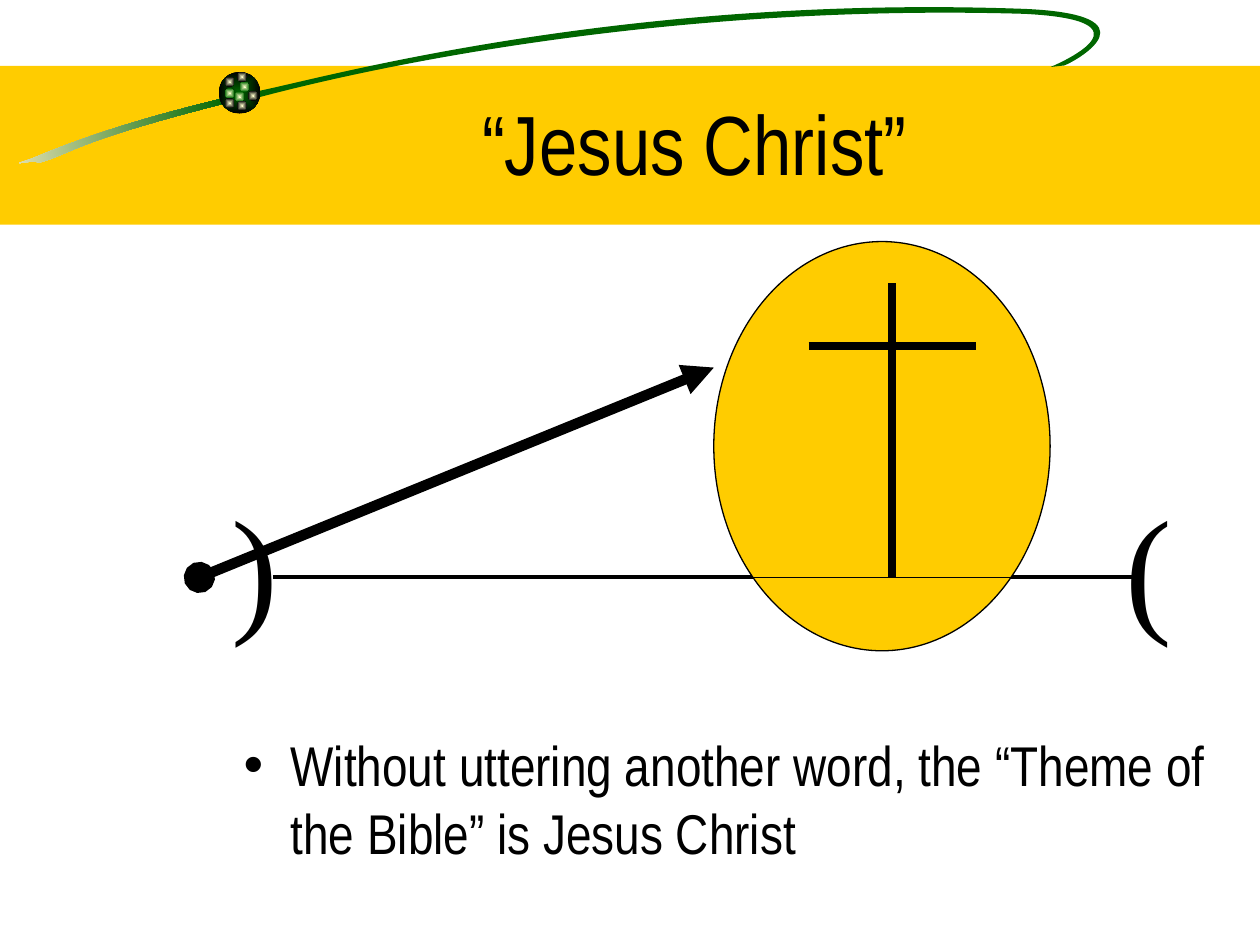
from math import cos, radians, sin

from lxml.etree import SubElement
from pptx import Presentation
from pptx.dml.color import RGBColor
from pptx.enum.shapes import MSO_CONNECTOR, MSO_SHAPE
from pptx.enum.text import MSO_ANCHOR, MSO_AUTO_SIZE, PP_ALIGN
from pptx.oxml.ns import qn
from pptx.util import Cm, Pt

COLORS = {"gold": "FFCC00", "green": "006600", "cream": "F5EBC1",
          "light": "FFFFCC", "black": "000000"}
RGB = {name: RGBColor.from_string(value) for name, value in COLORS.items()}


def paint(sp, *colors, radial=False, outline=None):
    """Fill a shape with one colour or a two-colour gradient."""
    sp.shadow.inherit = False
    if len(colors) == 1:
        sp.fill.solid()
        sp.fill.fore_color.rgb = RGB[colors[0]]
    else:
        sp.fill.gradient()
        sp.fill.gradient_angle = 0
        for stop, color, position in zip(sp.fill.gradient_stops, colors, (0, 1)):
            stop.color.rgb = RGB[color]
            stop.position = position
    if radial:
        grad = sp.element.spPr.find(qn("a:gradFill"))
        grad.remove(grad.find(qn("a:lin")))
        shade = SubElement(grad, qn("a:path"), path="shape")
        SubElement(shade, qn("a:fillToRect"), l="50000", t="50000", r="50000", b="50000")
    if outline:
        sp.line.color.rgb = RGB["black"]
        sp.line.width = Pt(outline)
    else:
        sp.line.fill.background()


def write(sp, text, **font):
    """Put one formatted paragraph into a shape and return the paragraph."""
    tf = sp.text_frame
    tf.word_wrap = True
    tf.auto_size = MSO_AUTO_SIZE.NONE
    p = tf.paragraphs[0]
    r = p.add_run()
    r.text = text
    r.font.color.rgb = RGB["black"]
    for key, value in font.items():
        setattr(r.font, key, value)
    return p


prs = Presentation()
prs.slide_width, prs.slide_height = Cm(25.4), Cm(19.05)
s = prs.slides.add_slide(prs.slide_layouts[5])
title = s.shapes.title

# Gold band
band = s.shapes.add_shape(MSO_SHAPE.RECTANGLE, 0, Cm(1.33), prs.slide_width, Cm(3.2))
paint(band, "gold")

# Swoosh: colours, box, then slide points of each move, curve or line
TILT = 8.5
SWOOSHES = [
    (("cream", "green"), (-0.08, 2.31, 4.67, 0.76), [
        (4.52, 1.98),
        (2.31, 2.51, 1.24, 2.95, 0.64, 3.2),
        (0.03, 3.4, 0.66, 3.2, 0.79, 3.28),
        (1.45, 3.1, 1.45, 2.87, 4.55, 2.08)]),
    (("green",), (5.11, -0.38, 18.19, 2.77), [
        (5.13, 1.85),
        (6.25, 1.65, 12.34, -0.13, 20.68, 0.18),
        (23.29, 0.3, 21.77, 1.19, 21.46, 1.32),
        (21.18, 1.35),
        (21.44, 1.24, 23.29, 0.41, 20.65, 0.28),
        (13.92, 0.08, 8.13, 1.19, 5.23, 1.96)]),
]
turn_cos, turn_sin = cos(radians(TILT)), sin(radians(TILT))
for colors, (left, top, width, height), pieces in SWOOSHES:
    builder = s.shapes.build_freeform(Cm(left), Cm(top))
    builder.add_line_segments([(Cm(left + width), Cm(top + height))])
    sp = builder.convert_to_shape()
    outline = next(sp.element.iter(qn("a:path")))
    for child in list(outline):
        outline.remove(child)
    for i, piece in enumerate(pieces):
        tag = "a:moveTo" if i == 0 else "a:lnTo" if len(piece) == 2 else "a:cubicBezTo"
        segment = SubElement(outline, qn(tag))
        for x, y in zip(piece[::2], piece[1::2]):
            dx, dy = x - left - width / 2, y - top - height / 2
            local_x = dx * turn_cos - dy * turn_sin + width / 2
            local_y = dx * turn_sin + dy * turn_cos + height / 2
            SubElement(segment, qn("a:pt"), x=str(Cm(local_x)), y=str(Cm(local_y)))
    SubElement(outline, qn("a:close"))
    sp.rotation = 360 - TILT
    paint(sp, *colors)

# Ball with glowing dots
BALL = [
    (4.41, 1.45, 0.84, "green", "black"),
    (4.83, 1.65, 0.2, "light", "green"),
    (4.53, 1.55, 0.2, "light", "black"),
    (4.53, 1.78, 0.2, "light", "green"),
    (4.73, 1.85, 0.2, "light", "green"),
    (5.0, 1.83, 0.2, "light", "black"),
    (4.78, 2.03, 0.2, "light", "black"),
    (4.53, 1.98, 0.2, "light", "black"),
    (4.78, 1.45, 0.2, "light", "black"),
]
for x, y, size, inner, outer in BALL:
    dot = s.shapes.add_shape(MSO_SHAPE.OVAL, Cm(x), Cm(y), Cm(size), Cm(size))
    paint(dot, inner, outer, radial=True)

# Title, brought in front of the band
title.element.getparent().append(title.element)
box = {"left": Cm(3.2), "top": Cm(1.27), "width": Cm(21.6), "height": Cm(3.18)}
for key, value in box.items():
    setattr(title, key, value)
p = write(title, "“Jesus Christ”", name="Arial Narrow", size=Pt(48))
p.alignment = PP_ALIGN.CENTER
title.text_frame.vertical_anchor = MSO_ANCHOR.MIDDLE

# Bulleted statement
body = s.shapes.add_textbox(Cm(4.66), Cm(14.61), Cm(20.74), Cm(4.44))
p = write(body, "Without uttering another word, the “Theme of the Bible” is Jesus Christ",
          name="Arial Narrow", size=Pt(32))
pPr = p._p.get_or_add_pPr()
pPr.set("marL", str(Cm(0.95)))
pPr.set("indent", str(-Cm(0.95)))
SubElement(pPr, qn("a:buFont"), typeface="Arial")
SubElement(pPr, qn("a:buChar"), char="•")

# Timeline, with a bracket at each end
LINES = [
    (5.5, 11.64, 23.07, 11.64, 2.25),
    (17.99, 11.64, 17.99, 5.71, 4.5),
    (16.3, 6.98, 19.68, 6.98, 4.5),
    (13.76, 11.64, 20.96, 11.64, 0.75),
    (4.02, 11.64, 14.39, 7.41, 6),
]
for i, (x1, y1, x2, y2, width) in enumerate(LINES):
    line = s.shapes.add_connector(MSO_CONNECTOR.STRAIGHT, Cm(x1), Cm(y1), Cm(x2), Cm(y2))
    line.line.color.rgb = RGB["black"]
    line.line.width = Pt(width)
    SubElement(line.element.spPr, qn("a:effectLst"))
    if i == 0:
        for text, x, box_width in (("(", 22.43, 2.97), (")", 4.42, 4.02)):
            bracket = s.shapes.add_textbox(Cm(x), Cm(9.53), Cm(box_width), Cm(3.63))
            write(bracket, text, name="Times New Roman", size=Pt(80))
        # Gold oval behind the cross
        oval = s.shapes.add_shape(MSO_SHAPE.OVAL, Cm(14.39), Cm(4.87), Cm(6.78), Cm(8.25))
        paint(oval, "gold", outline=0.75)

# Ends of the last line, the arrow
ln = line.line._get_or_add_ln()
SubElement(ln, qn("a:headEnd"), type="oval")
SubElement(ln, qn("a:tailEnd"), type="triangle")

prs.save("out.pptx")
